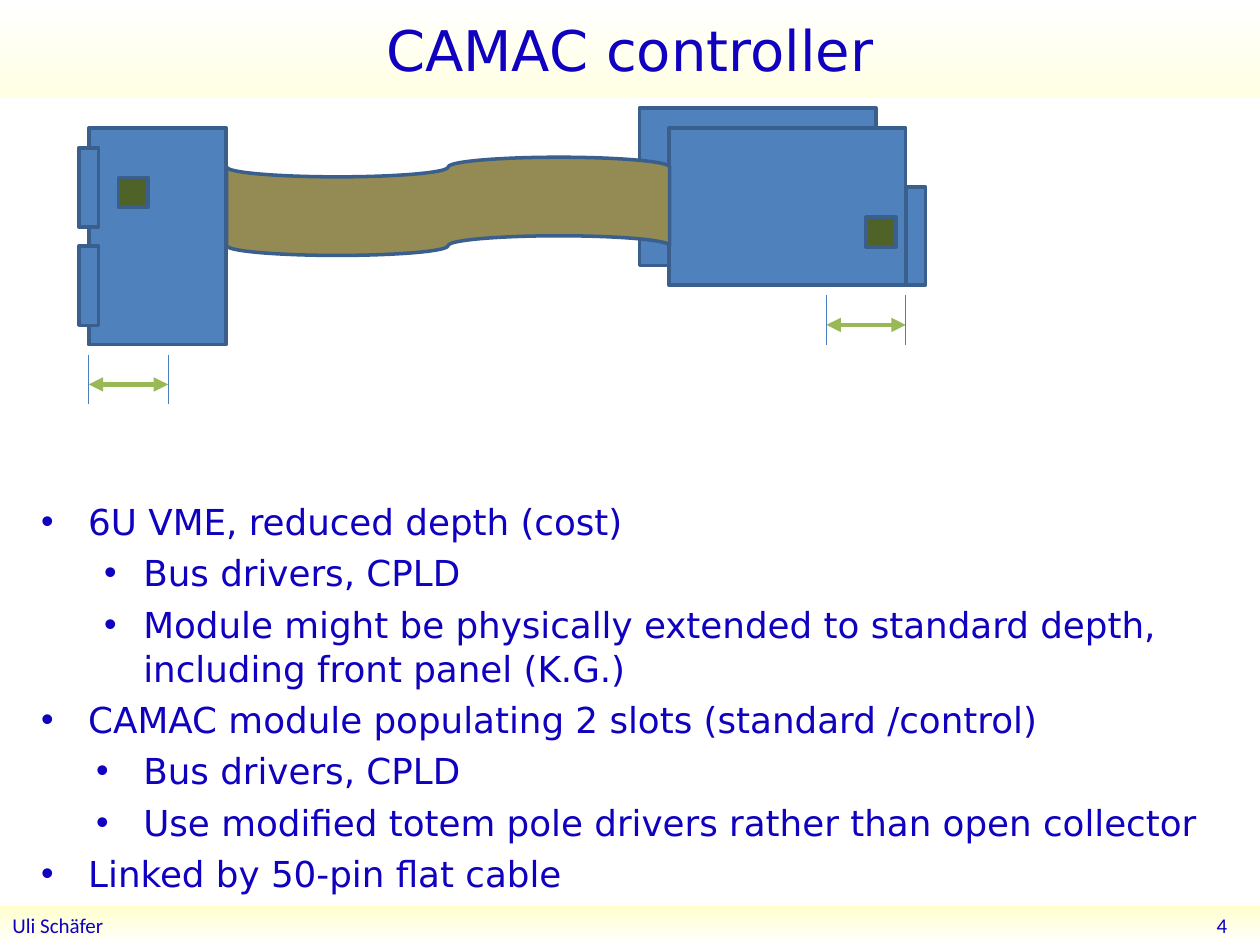
from dataclasses import dataclass

from lxml import etree
from pptx import Presentation
from pptx.dml.color import RGBColor
from pptx.enum.shapes import MSO_CONNECTOR, MSO_SHAPE
from pptx.enum.text import MSO_ANCHOR, PP_ALIGN
from pptx.oxml.ns import qn
from pptx.util import Cm, Pt

RECT = MSO_SHAPE.RECTANGLE
TAPE = MSO_SHAPE.FLOWCHART_PUNCHED_TAPE
STRAIGHT = MSO_CONNECTOR.STRAIGHT
TOP, MIDDLE = MSO_ANCHOR.TOP, MSO_ANCHOR.MIDDLE
LEFT, CENTER, RIGHT = PP_ALIGN.LEFT, PP_ALIGN.CENTER, PP_ALIGN.RIGHT


@dataclass(frozen=True)
class Theme:
    text: str = "0F01BF"
    board: str = "4F81BD"
    outline: str = "3A5F8C"
    cable: str = "948A54"
    chip: str = "4F6228"
    arrow: str = "98B955"
    guide: str = "4B7EBC"
    title_band: tuple = ("FFFFFF", "FFFFE3")
    footer_band: tuple = ("FFFFCC", "FFFFFF")
    main_font: str = "DejaVu Sans"
    footer_font: str = "Calibri"
    title_size: float = 32
    body_size: float = 20.4
    footer_size: float = 12


THEME = Theme()
PLUG_WIDTH, CHIP_SIDE, DEPTH = 0.4, 0.6, 1.6

# Indent styles: left margin and hanging indent in cm
MAIN, SUB, DEEP_SUB = (0, 0.95, 0.95), (1, 2.06, 0.79), (2, 2.06, 0.95)
POINTS = [
    (MAIN, "6U VME, reduced depth (cost)"),
    (SUB, "Bus drivers, CPLD"),
    (SUB, "Module might be physically extended to standard depth, "
          "including front panel (K.G.)"),
    (MAIN, "CAMAC module populating 2 slots (standard /control)"),
    (DEEP_SUB, "Bus drivers, CPLD"),
    (DEEP_SUB, "Use modified totem pole drivers rather than open collector"),
    (MAIN, "Linked by 50-pin flat cable"),
]


def rgb(value):
    return RGBColor.from_string(value)


def lengths(box):
    return [Cm(value) for value in box]


def write(paragraph, text, size, font=THEME.main_font, align=LEFT):
    paragraph.alignment = align
    run = paragraph.add_run()
    run.text = text
    run.font.size, run.font.name = Pt(size), font
    run.font.color.rgb = rgb(THEME.text)


def open_frame(shape, anchor):
    frame = shape.text_frame
    frame.word_wrap, frame.vertical_anchor = True, anchor
    return frame


def shade(shape, colors):
    """Fill a band from top to bottom."""
    shape.fill.gradient()
    shape.fill.gradient_angle = 270
    for stop, color in zip(shape.fill.gradient_stops, colors):
        stop.color.rgb = rgb(color)


def add_part(shapes, box, fill=THEME.board, kind=RECT):
    part = shapes.add_shape(kind, *lengths(box))
    part.shadow.inherit = False
    part.fill.solid()
    part.fill.fore_color.rgb = rgb(fill)
    part.line.color.rgb = rgb(THEME.outline)
    part.line.width = Pt(2)


def add_line(shapes, ends, color, width, arrows=False):
    connector = shapes.add_connector(STRAIGHT, *lengths(ends))
    connector.line.color.rgb = rgb(color)
    connector.line.width = Pt(width)
    if arrows:
        line_xml = connector.line._get_or_add_ln()
        for end in ("a:headEnd", "a:tailEnd"):
            etree.SubElement(line_xml, qn(end), type="triangle")
    etree.SubElement(connector._element.spPr, qn("a:effectLst"))


def add_depth_mark(shapes, x, y):
    """Double arrow between two vertical guides."""
    add_line(shapes, (x, y + 0.6, x + DEPTH, y + 0.6), THEME.arrow, 2.75, arrows=True)
    for guide_x in (x, x + DEPTH):
        add_line(shapes, (guide_x, y, guide_x, y + 1), THEME.guide, 0.75)


def add_chip(shapes, x, y):
    add_part(shapes, (x, y, CHIP_SIDE, CHIP_SIDE), THEME.chip)


def draw_vme_module(shapes, box):
    x, y, _, height = box
    add_part(shapes, box)
    for row in range(2):
        add_part(shapes, (x - PLUG_WIDTH / 2, y + 0.4 + row * 1.98, PLUG_WIDTH, 1.6))
    add_chip(shapes, x + 0.6, y + 1)
    add_depth_mark(shapes, x, y + height + 0.2)


def draw_camac_module(shapes, box):
    x, y, width, height = box
    right, bottom = x + width, y + height
    # Two boards, one for each slot
    slots = shapes.add_group_shape().shapes
    add_part(slots, (x - 0.6, y - 0.4, width, height))
    add_part(slots, box)
    add_part(shapes, (right, bottom - 1.98, PLUG_WIDTH, 1.98))
    add_chip(shapes, right - 0.2 - CHIP_SIDE, y + 1.8)
    add_depth_mark(shapes, right - DEPTH, bottom + 0.2)


def draw_title(slide, box):
    title = slide.shapes.title
    title.left, title.top, title.width, title.height = lengths(box)
    shade(title, THEME.title_band)
    frame = open_frame(title, MIDDLE)
    write(frame.paragraphs[0], "CAMAC controller", THEME.title_size, align=CENTER)


def draw_points(shapes, box):
    frame = open_frame(shapes.add_textbox(*lengths(box)), TOP)
    for index, ((level, margin, hanging), text) in enumerate(POINTS):
        paragraph = frame.add_paragraph() if index else frame.paragraphs[0]
        paragraph.level = level
        paragraph.space_before = Pt(4.1)
        paragraph.line_spacing = 1.03
        write(paragraph, text, THEME.body_size)
        properties = paragraph._p.get_or_add_pPr()
        properties.set("marL", str(Cm(margin)))
        properties.set("indent", str(-Cm(hanging)))
        etree.SubElement(properties, qn("a:buFont"), typeface="Arial")
        etree.SubElement(properties, qn("a:buChar"), char="•")


def draw_footer(shapes, box):
    x, y, width, height = box
    band = shapes.add_shape(RECT, *lengths(box))
    band.shadow.inherit = False
    band.line.fill.background()
    shade(band, THEME.footer_band)
    number = shapes.add_textbox(*lengths((x + width - 5.77, y, 5.36, height)))
    for holder, text, align in ((band, "Uli Schäfer", LEFT), (number, "4", RIGHT)):
        write(open_frame(holder, MIDDLE).paragraphs[0], text, THEME.footer_size,
              font=THEME.footer_font, align=align)


def main():
    deck = Presentation()
    deck.slide_width, deck.slide_height = Cm(25.4), Cm(19.05)
    slide = deck.slides.add_slide(deck.slide_layouts[5])
    shapes = slide.shapes
    draw_title(slide, (0, 0, 25.4, 1.98))
    draw_points(shapes, (0.58, 9.93, 24.2, 7.95))
    draw_footer(shapes, (0, 18.26, 25.4, 0.79))
    draw_vme_module(shapes, (1.79, 2.58, 2.77, 4.37))
    draw_camac_module(shapes, (13.49, 2.58, 4.77, 3.17))
    # Flat cable between the two modules
    add_part(shapes, (4.57, 3.17, 8.93, 1.98), THEME.cable, TAPE)
    deck.save("out.pptx")


if __name__ == "__main__":
    main()
